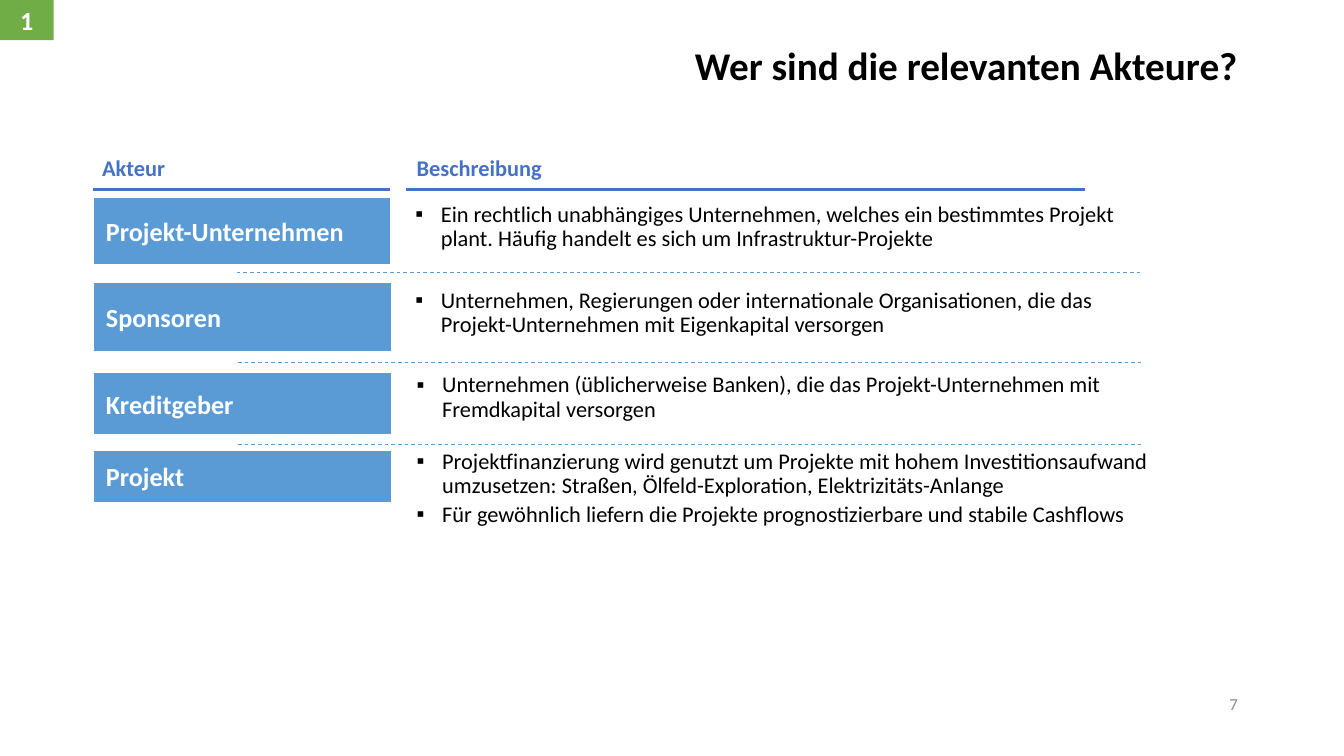
from lxml import etree
from pptx import Presentation
from pptx.dml.color import RGBColor
from pptx.enum.dml import MSO_LINE
from pptx.enum.shapes import MSO_CONNECTOR, MSO_SHAPE
from pptx.enum.text import MSO_ANCHOR, MSO_AUTO_SIZE, PP_ALIGN
from pptx.oxml.ns import qn
from pptx.util import Inches, Pt

LEFT, CENTER, RIGHT = PP_ALIGN.LEFT, PP_ALIGN.CENTER, PP_ALIGN.RIGHT
TOP, MIDDLE = MSO_ANCHOR.TOP, MSO_ANCHOR.MIDDLE
DASH = MSO_LINE.DASH

COLORS = {
    "text": "000000",
    "white": "FFFFFF",
    "heading": "4472C4",
    "actor": "5B9BD5",
    "section": "70AD47",
    "page": "8C8C8C",
}

TITLE = "Wer sind die relevanten Akteure?"
SECTION = "1"
PAGE = "7"

# heading, left of text, width of text, rule start, rule end
HEADINGS = [
    ("Akteur", 0.69, 2.33, 0.69, 2.9),
    ("Beschreibung", 3.03, 4.46, 3.02, 8.07),
]

# actor, (top, width, height) of its box, (left, top, height) of its text, points
ACTORS = [
    ("Projekt-Unternehmen", (1.47, 2.22, 0.5), (3.02, 1.47, 0.44), [
        "Ein rechtlich unabhängiges Unternehmen, welches ein bestimmtes Projekt "
        "plant. Häufig handelt es sich um Infrastruktur-Projekte"]),
    ("Sponsoren", (2.1, 2.23, 0.52), (3.02, 2.11, 0.44), [
        "Unternehmen, Regierungen oder internationale Organisationen, die das "
        "Projekt-Unternehmen mit Eigenkapital versorgen"]),
    ("Kreditgeber", (2.77, 2.23, 0.47), (3.03, 2.74, 0.44), [
        "Unternehmen (üblicherweise Banken), die das Projekt-Unternehmen mit "
        "Fremdkapital versorgen"]),
    ("Projekt", (3.35, 2.23, 0.39), (3.03, 3.31, 0.65), [
        "Projektfinanzierung wird genutzt um Projekte mit hohem Investitionsaufwand "
        "umzusetzen: Straßen, Ölfeld-Exploration, Elektrizitäts-Anlange",
        "Für gewöhnlich liefern die Projekte prognostizierbare und stabile Cashflows"]),
]

SEPARATORS = [(1.76, 2.03), (1.77, 2.7), (1.77, 3.31)]
SEPARATOR_WIDTH = 6.72
SLIDE_WIDTH = Inches(10)
SLIDE_HEIGHT = SLIDE_WIDTH * 9 // 16
HEADING_TOP, HEADING_HEIGHT, RULE_Y = 1.15, 0.22, 1.41
ACTOR_LEFT, DESCRIPTION_WIDTH = 0.69, 5.68
BULLET_INDENT = 0.19
NARROW = (0.07, 0.04)
WIDE = (0.1, 0.05)


def rgb(name):
    return RGBColor.from_string(COLORS[name])


def add_bullet(paragraph):
    properties = paragraph._p.get_or_add_pPr()
    properties.set("marL", str(Inches(BULLET_INDENT)))
    properties.set("indent", str(-Inches(BULLET_INDENT)))
    color = etree.SubElement(properties, qn("a:buClr"))
    etree.SubElement(color, qn("a:srgbClr"), val=COLORS["text"])
    etree.SubElement(properties, qn("a:buFont"), typeface="Arial")
    etree.SubElement(properties, qn("a:buChar"), char="▪")


def write(shape, lines, size, color, bold=False, align=LEFT, anchor=MIDDLE,
          insets=WIDE, spacing=1.0, bullets=False):
    frame = shape.text_frame
    side, edge = map(Inches, insets)
    frame_format = {
        "word_wrap": True, "auto_size": MSO_AUTO_SIZE.NONE,
        "vertical_anchor": anchor,
        "margin_left": side, "margin_right": side,
        "margin_top": edge, "margin_bottom": edge,
    }
    for attribute, value in frame_format.items():
        setattr(frame, attribute, value)
    font_format = {"name": "Calibri", "size": Pt(size), "bold": bold}
    for index, line in enumerate(lines):
        paragraph = frame.add_paragraph() if index else frame.paragraphs[0]
        if bullets:
            add_bullet(paragraph)
        paragraph.alignment = align
        paragraph.line_spacing = spacing
        if index:
            paragraph.space_before = Pt(2.2)
        run = paragraph.add_run()
        run.text = line
        for attribute, value in font_format.items():
            setattr(run.font, attribute, value)
        run.font.color.rgb = rgb(color)


def add_text(slide, box, lines, size, color, **options):
    write(slide.shapes.add_textbox(*map(Inches, box)), lines, size, color, **options)


def add_box(slide, box, label, fill, outline=None, align=LEFT):
    shape = slide.shapes.add_shape(MSO_SHAPE.RECTANGLE, *map(Inches, box))
    shape.shadow.inherit = False
    shape.fill.solid()
    shape.fill.fore_color.rgb = rgb(fill)
    if outline:
        shape.line.color.rgb = rgb(outline)
        shape.line.width = Pt(1)
    else:
        shape.line.fill.background()
    write(shape, [label], 14, "white", bold=True, align=align)


def add_rule(slide, start, end, y, color, width, dash=None):
    rule = slide.shapes.add_connector(
        MSO_CONNECTOR.STRAIGHT, *map(Inches, (start, y, end, y)))
    rule.line.color.rgb = rgb(color)
    rule.line.width = Pt(width)
    if dash:
        rule.line.dash_style = dash
    etree.SubElement(rule._element.spPr, qn("a:effectLst"))


def main():
    deck = Presentation()
    deck.slide_width, deck.slide_height = SLIDE_WIDTH, SLIDE_HEIGHT
    slide = deck.slides.add_slide(deck.slide_layouts[5])

    title = slide.shapes.title
    title_place = {"left": 0.69, "top": 0.3, "width": 8.62, "height": 0.43}
    for attribute, value in title_place.items():
        setattr(title, attribute, Inches(value))
    write(title, [TITLE], 21, "text", bold=True, align=RIGHT, anchor=TOP, spacing=0.9)

    for heading, left, width, start, end in HEADINGS:
        add_rule(slide, start, end, RULE_Y, "heading", 1.5)
        add_text(slide, (left, HEADING_TOP, width, HEADING_HEIGHT), [heading],
                 12, "heading", bold=True, insets=NARROW, spacing=0.9)

    for actor, (top, width, height), (text_left, text_top, text_height), points in ACTORS:
        add_box(slide, (ACTOR_LEFT, top, width, height), actor, "actor", "white")
        add_text(slide, (text_left, text_top, DESCRIPTION_WIDTH, text_height), points,
                 12, "text", anchor=TOP, insets=NARROW, spacing=0.9, bullets=True)

    for left, y in SEPARATORS:
        add_rule(slide, left, left + SEPARATOR_WIDTH, y, "actor", 0.5, DASH)

    add_box(slide, (0, 0, 0.4, 0.3), SECTION, "section", align=CENTER)
    add_text(slide, (7.06, 5.09, 2.25, 0.3), [PAGE], 9, "page", align=RIGHT)

    deck.save("out.pptx")


if __name__ == "__main__":
    main()
